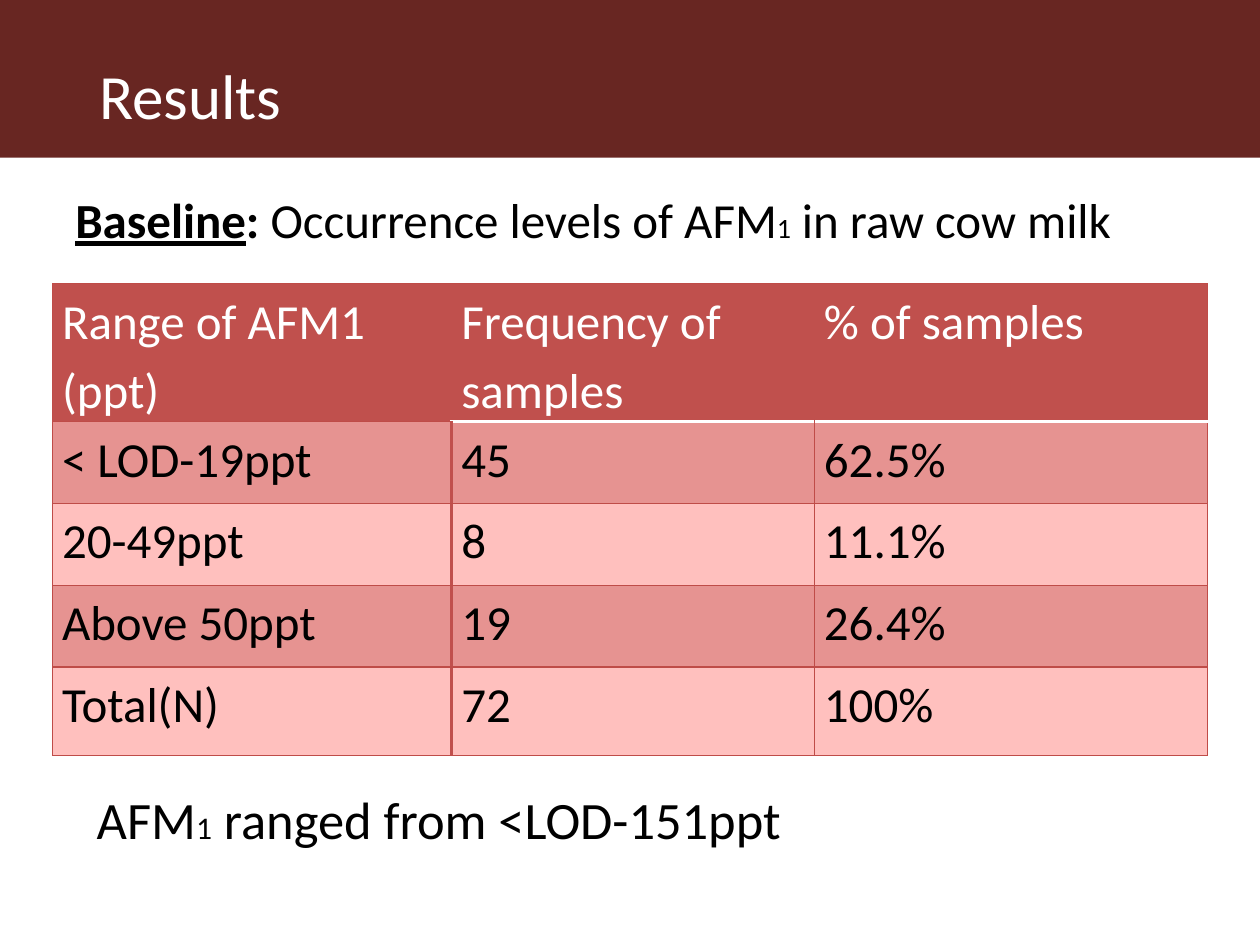
from dataclasses import dataclass

from lxml import etree
from pptx import Presentation
from pptx.dml.color import RGBColor
from pptx.enum.shapes import MSO_SHAPE
from pptx.enum.text import MSO_ANCHOR, PP_ALIGN
from pptx.oxml.ns import qn
from pptx.slide import Slide
from pptx.table import _Cell
from pptx.util import Cm, Pt

RECTANGLE = MSO_SHAPE.RECTANGLE
TOP = MSO_ANCHOR.TOP
LEFT = PP_ALIGN.LEFT

FONT = "Calibri"
MAROON = RGBColor(0x68, 0x26, 0x22)
RED = RGBColor(0xC0, 0x50, 0x4D)
BORDER_RED = RGBColor(0xBF, 0x4C, 0x48)
DARK_PINK = RGBColor(0xE6, 0x93, 0x91)
LIGHT_PINK = RGBColor(0xFF, 0xC0, 0xBE)
WHITE = RGBColor(0xFF, 0xFF, 0xFF)
BLACK = RGBColor(0, 0, 0)
PLAIN_TABLE_STYLE = "{2D5ABB26-0587-4C30-8999-92F81FD0307C}"

ROWS = (
    ("Range of AFM1 (ppt)", "Frequency of samples", "% of samples"),
    ("< LOD-19ppt", "45", "62.5%"),
    ("20-49ppt", "8", "11.1%"),
    ("Above 50ppt", "19", "26.4%"),
    ("Total(N)", "72", "100%"),
)
COLUMN_WIDTHS = (8.05, 7.31, 7.93)
ROW_HEIGHTS = (2.54, 1.65, 1.65, 1.65, 1.78)


@dataclass(frozen=True)
class Piece:
    text: str
    size: int
    bold: bool = False
    underline: bool = False


@dataclass(frozen=True)
class Statement:
    left: float
    top: float
    height: float
    pieces: tuple[Piece, ...]


@dataclass(frozen=True)
class Border:
    color: RGBColor
    width: float


THIN = Border(BORDER_RED, 0.75)
DIVIDER = Border(RED, 2)
HEADER_RULE = Border(WHITE, 2)

STATEMENTS = (
    Statement(1.27, 3.61, 2.97, (
        Piece("Baseline", 28, bold=True, underline=True),
        Piece(": ", 28, bold=True),
        Piece("Occurrence levels of AFM", 28),
        Piece("1", 16),
        Piece(" in raw cow milk", 28),
    )),
    Statement(1.7, 15.65, 1.7, (
        Piece("AFM", 30),
        Piece("1", 18),
        Piece(" ranged from <LOD-151ppt", 30),
    )),
)


def add_title(slide: Slide) -> None:
    title = slide.shapes.title
    title.left, title.top, title.width, title.height = Cm(1.75), Cm(1.02), Cm(21.9), Cm(3.68)
    title.text_frame.vertical_anchor = TOP
    paragraph = title.text_frame.paragraphs[0]
    paragraph.text = "Results"
    paragraph.alignment = LEFT
    paragraph.font.name, paragraph.font.size = FONT, Pt(36)
    paragraph.font.color.rgb = WHITE


def add_band(slide: Slide) -> None:
    """Draw the heading band behind the title."""
    band = slide.shapes.add_shape(RECTANGLE, 0, 0, Cm(25.4), Cm(3.18))
    band.shadow.inherit = False
    band.fill.solid()
    band.fill.fore_color.rgb = MAROON
    band.line.fill.background()
    slide.shapes.title.element.addprevious(band.element)


def add_statement(slide: Slide, statement: Statement) -> None:
    box = slide.shapes.add_textbox(
        Cm(statement.left), Cm(statement.top), Cm(21.9), Cm(statement.height))
    box.text_frame.word_wrap = True
    paragraph = box.text_frame.paragraphs[0]
    paragraph.line_spacing = 1.07
    paragraph.space_after = Pt(8)
    paragraph.font.name = FONT
    paragraph.font.color.rgb = BLACK
    for piece in statement.pieces:
        run = paragraph.add_run()
        run.text = piece.text
        run.font.size = Pt(piece.size)
        run.font.bold, run.font.underline = piece.bold, piece.underline


def set_border(cell: _Cell, side: str, border: Border | None) -> None:
    if border is None:
        return
    line = etree.SubElement(cell._tc.get_or_add_tcPr(), qn(f"a:ln{side}"),
                            w=str(Pt(border.width)))
    fill = etree.SubElement(line, qn("a:solidFill"))
    etree.SubElement(fill, qn("a:srgbClr"), val=str(border.color))


def format_cell(cell: _Cell, row: int, column: int) -> None:
    header, first, last = row == 0, column == 0, column == len(COLUMN_WIDTHS) - 1
    if header:
        left, right = THIN if first else None, THIN if last else None
    else:
        left, right = DIVIDER if column == 1 else THIN, DIVIDER if first else THIN
    rule = THIN if first else HEADER_RULE
    set_border(cell, "L", left)
    set_border(cell, "R", right)
    set_border(cell, "T", rule if row == 1 else THIN)
    set_border(cell, "B", rule if header else THIN)

    cell.fill.solid()
    cell.fill.fore_color.rgb = RED if header else DARK_PINK if row % 2 else LIGHT_PINK
    cell.margin_left = cell.margin_right = Cm(0.19)
    cell.margin_top = cell.margin_bottom = 0
    paragraph = cell.text_frame.paragraphs[0]
    paragraph.line_spacing = 1.15
    paragraph.font.name, paragraph.font.size = FONT, Pt(28)
    paragraph.font.bold = False
    paragraph.font.color.rgb = WHITE if header else BLACK


def add_results_table(slide: Slide) -> None:
    table = slide.shapes.add_table(
        len(ROWS), len(COLUMN_WIDTHS), Cm(1.06), Cm(5.72),
        Cm(sum(COLUMN_WIDTHS)), Cm(sum(ROW_HEIGHTS))).table
    table._tbl.tblPr.find(qn("a:tableStyleId")).text = PLAIN_TABLE_STYLE
    for column, width in zip(table.columns, COLUMN_WIDTHS):
        column.width = Cm(width)
    for row, height in zip(table.rows, ROW_HEIGHTS):
        row.height = Cm(height)
    for row_index, texts in enumerate(ROWS):
        for column_index, text in enumerate(texts):
            cell = table.cell(row_index, column_index)
            cell.text = text
            format_cell(cell, row_index, column_index)


def main() -> None:
    presentation = Presentation()
    presentation.slide_width, presentation.slide_height = Cm(25.4), Cm(19.05)
    slide = presentation.slides.add_slide(presentation.slide_layouts.get_by_name("Title Only"))
    add_title(slide)
    add_band(slide)
    add_results_table(slide)
    for statement in STATEMENTS:
        add_statement(slide, statement)
    presentation.save("out.pptx")


if __name__ == "__main__":
    main()
